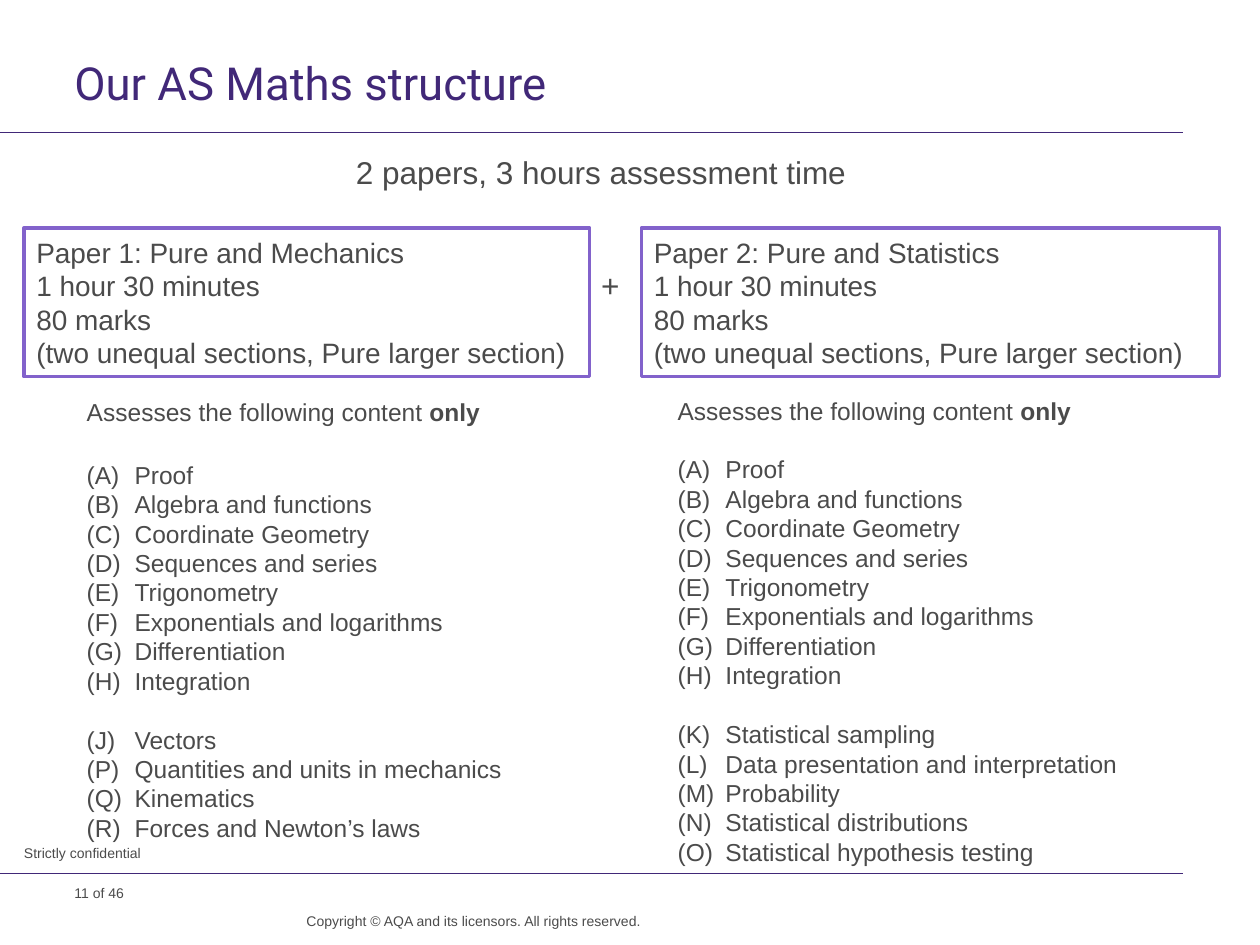
from pptx import Presentation
from pptx import util as u
from pptx.dml.color import RGBColor
from pptx.enum import shapes, text
from pptx.oxml import xmlchemy as x

PURPLE = RGBColor(0x41, 0x28, 0x78)
LILAC = RGBColor(0x82, 0x62, 0xCB)
GREY = RGBColor(0x4B, 0x4B, 0x4B)
WHITE = RGBColor(0xFF, 0xFF, 0xFF)

SHARED_TOPICS = [
    ("A", "Proof"), ("B", "Algebra and functions"),
    ("C", "Coordinate Geometry"), ("D", "Sequences and series"),
    ("E", "Trigonometry"), ("F", "Exponentials and logarithms"),
    ("G", "Differentiation"), ("H", "Integration"),
]
MECHANICS = [
    ("J", "Vectors"), ("P", "Quantities and units in mechanics"),
    ("Q", "Kinematics"), ("R", "Forces and Newton’s laws"),
]
STATISTICS = [
    ("K", "Statistical sampling"),
    ("L", "Data presentation and interpretation"),
    ("M", "Probability"), ("N", "Statistical distributions"),
    ("O", "Statistical hypothesis testing"),
]


def inches(box):
    return [u.Inches(v) for v in box]


def style(p, size, spacing, color=GREY, font="Arial"):
    p.line_spacing = u.Pt(spacing)
    for r in p.runs:
        r.font.size = u.Pt(size)
        r.font.name = font
        r.font.color.rgb = color


def set_insets(tf, left=0, top=0, right=0, bottom=0):
    tf.margin_left, tf.margin_top, tf.margin_right, tf.margin_bottom = inches(
        (left, top, right, bottom))


def add_label(s, box, words, size, spacing, align=text.PP_ALIGN.LEFT):
    tf = s.shapes.add_textbox(*inches(box)).text_frame
    tf.word_wrap = True
    set_insets(tf)
    tf.text = words
    p = tf.paragraphs[0]
    p.alignment = align
    style(p, size, spacing)


def add_rule(s, y):
    line = s.shapes.add_connector(
        shapes.MSO_CONNECTOR.STRAIGHT, *inches((0, y, 9.39, y)))
    line.line.color.rgb = PURPLE
    line.line.width = u.Pt(0.6)
    line._element.spPr.append(x.OxmlElement("a:effectLst"))


def add_title(s, box, words):
    title = s.shapes.title
    title.left, title.top, title.width, title.height = inches(box)
    tf = title.text_frame
    tf.text = words
    tf.vertical_anchor = text.MSO_ANCHOR.TOP
    set_insets(tf, right=0.1)
    p = tf.paragraphs[0]
    p.alignment = text.PP_ALIGN.LEFT
    style(p, 26, 28, PURPLE, "Roboto")


def add_paper(s, box, name):
    sp = s.shapes.add_shape(shapes.MSO_SHAPE.RECTANGLE, *inches(box))
    sp.shadow.inherit = False
    sp.fill.background()
    sp.line.color.rgb = LILAC
    sp.line.width = u.Pt(2)
    tf = sp.text_frame
    tf.word_wrap = True
    tf.vertical_anchor = text.MSO_ANCHOR.MIDDLE
    tf.text = (f"{name}\n1 hour 30 minutes\n"
               "80 marks\v(two unequal sections, Pure larger section)")
    for p in tf.paragraphs:
        p.alignment = text.PP_ALIGN.LEFT
        style(p, 16, 19.2)


def add_content(s, box, topics, first_gap):
    tf = s.shapes.add_textbox(*inches(box)).text_frame
    tf.word_wrap = True
    p = tf.paragraphs[0]
    p.text = "Assesses the following content "
    r = p.add_run()
    r.text = "only"
    r.font.bold = True
    style(p, 14, 16.8)
    for group, gap in ((SHARED_TOPICS, first_gap), (topics, 16.8)):
        for i, (letter, topic) in enumerate(group):
            p = tf.add_paragraph()
            p.text = f"({letter})\t{topic}"
            pPr = p._p.get_or_add_pPr()
            pPr.set("marL", str(u.Inches(0.38)))
            pPr.set("indent", str(-u.Inches(0.38)))
            p.space_before = u.Pt(0 if i else gap)
            style(p, 14, 16.8)


def add_footer(s):
    add_rule(s, 6.93)
    add_label(s, (0.19, 6.7, 1.1, 0.15), "Strictly confidential", 8, 10)
    add_label(s, (0.59, 7.02, 1.57, 0.13), "11 of 46", 8, 9.6)
    add_label(s, (2.16, 7.24, 2.93, 0.26),
              "Copyright © AQA and its licensors. All rights reserved.",
              8, 10, text.PP_ALIGN.RIGHT)


def main():
    prs = Presentation()
    prs.slide_width, prs.slide_height = u.Inches(10), u.Inches(7.5)
    s = prs.slides.add_slide(prs.slide_layouts[5])
    s.background.fill.solid()
    s.background.fill.fore_color.rgb = WHITE

    add_title(s, (0.59, 0.48, 8.8, 0.47), "Our AS Maths structure")
    add_rule(s, 1.05)
    add_label(s, (0.42, 1.24, 8.7, 0.33),
              "2 papers, 3 hours assessment time", 18, 20,
              text.PP_ALIGN.CENTER)
    add_paper(s, (0.19, 1.81, 4.49, 1.18), "Paper 1: Pure and Mechanics")
    add_label(s, (4.68, 2.11, 0.33, 0.3), "+", 18, 21.6,
              text.PP_ALIGN.CENTER)
    add_paper(s, (5.09, 1.81, 4.59, 1.18), "Paper 2: Pure and Statistics")
    add_content(s, (0.59, 3.1, 3.86, 4.14), MECHANICS, 19.2)
    add_content(s, (5.28, 3.09, 3.83, 4.41), STATISTICS, 16.8)
    add_footer(s)
    prs.save("out.pptx")


if __name__ == "__main__":
    main()
